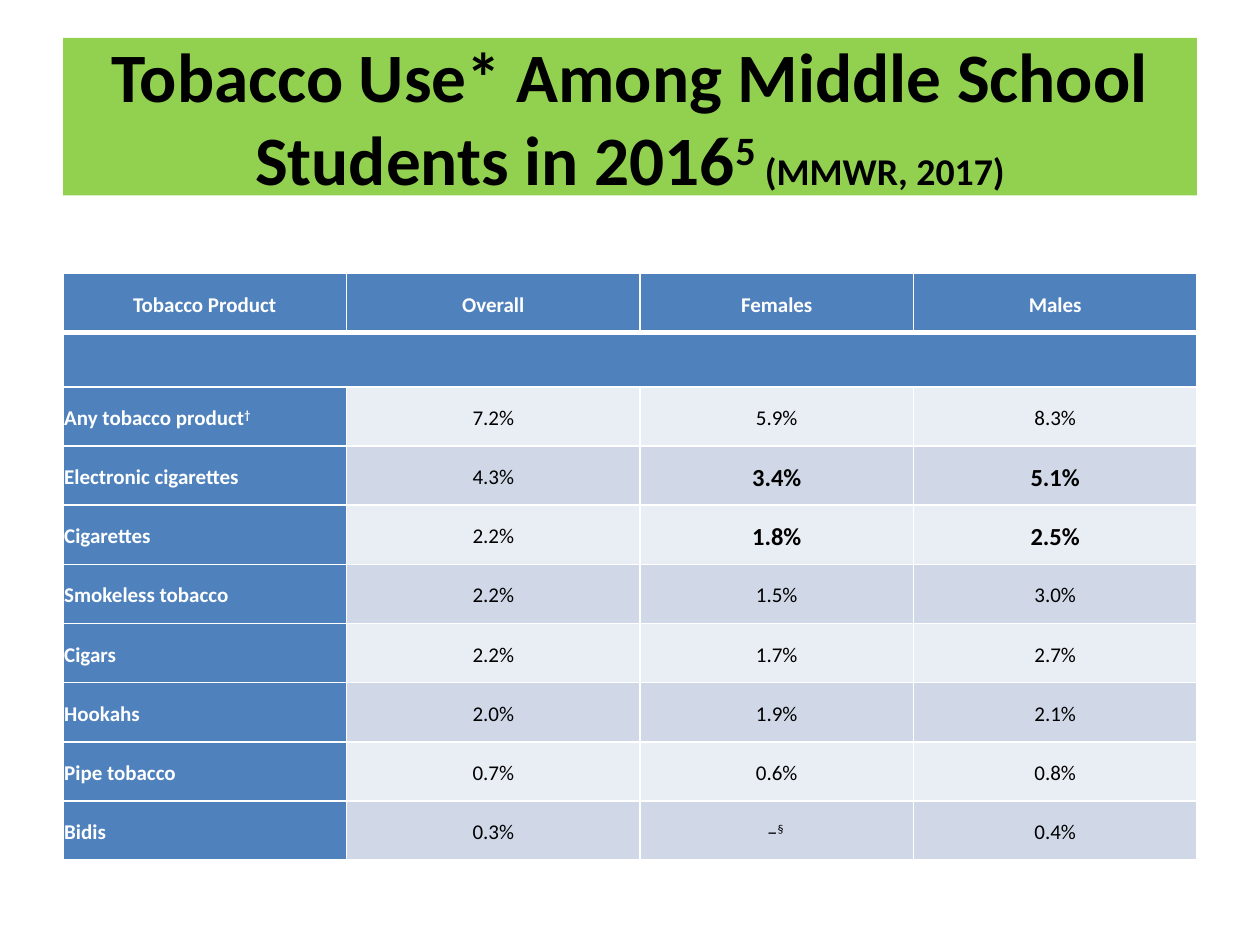
from lxml.etree import SubElement
from pptx import Presentation
from pptx.dml.color import RGBColor
from pptx.enum.text import MSO_ANCHOR as Anchor, MSO_AUTO_SIZE as AutoSize, PP_ALIGN as Align
from pptx.oxml.ns import qn
from pptx.util import Inches, Pt

COLORS = {
    "banner": "92D050",
    "header": "4F81BD",
    "light": "E9EDF4",
    "dark": "D0D8E8",
    "white": "FFFFFF",
    "black": "000000",
}
COLUMN_WIDTHS = [2.25, 2.33, 2.17, 2.25]
ROW_HEIGHTS = [0.47, 0.43] + [0.47] * 8
ROWS = [
    ["Tobacco Product", "Overall", "Females", "Males"],
    ["", "", "", ""],
    ["Any tobacco product^†", "7.2%", "5.9%", "8.3%"],
    ["Electronic cigarettes", "4.3%", "3.4%", "5.1%"],
    ["Cigarettes", "2.2%", "1.8%", "2.5%"],
    ["Smokeless tobacco", "2.2%", "1.5%", "3.0%"],
    ["Cigars", "2.2%", "1.7%", "2.7%"],
    ["Hookahs", "2.0%", "1.9%", "2.1%"],
    ["Pipe tobacco", "0.7%", "0.6%", "0.8%"],
    ["Bidis", "0.3%", "–^§ ", "0.4%"],
]
EMPHASIZED = {"3.4%", "5.1%", "1.8%", "2.5%"}


def write_text(para, text, size, color, bold):
    para.font.name = "Calibri"
    para.font.size = Pt(size)
    para.font.bold = bold
    para.font.color.rgb = RGBColor.from_string(COLORS[color])
    for index, part in enumerate(text.split("^")):
        span = para.add_run()
        span.text = part
        if index == 1:
            span.font._element.set("baseline", "30000")


def add_border(cell, side, width):
    line = SubElement(cell._tc.get_or_add_tcPr(), qn(f"a:ln{side}"), w=str(Pt(width)))
    fill = SubElement(line, qn("a:solidFill"))
    SubElement(fill, qn("a:srgbClr"), val=COLORS["white"])


deck = Presentation()
deck.slide_width = Inches(10)
deck.slide_height = Inches(7.5)
page = deck.slides.add_slide(deck.slide_layouts[5])

title = page.shapes.title
title.left, title.top = Inches(0.5), Inches(0.3)
title.width, title.height = Inches(9), Inches(1.25)
title.fill.solid()
title.fill.fore_color.rgb = RGBColor.from_string(COLORS["banner"])
frame = title.text_frame
frame.auto_size = AutoSize.NONE
frame.word_wrap = True
frame.vertical_anchor = Anchor.MIDDLE
heading = frame.paragraphs[0]
heading.alignment = Align.CENTER
write_text(heading, "Tobacco Use* Among Middle School Students in 2016^5 ^(MMWR, 2017)", 39.6, "black", True)
heading.runs[-1].font.size = Pt(21.6)

table = page.shapes.add_table(
    len(ROWS), len(COLUMN_WIDTHS), Inches(0.5), Inches(2.17), Inches(9), Inches(4.67)
).table
table.first_col = True
for column, width in zip(table.columns, COLUMN_WIDTHS):
    column.width = Inches(width)
for row, height in zip(table.rows, ROW_HEIGHTS):
    row.height = Inches(height)
table.cell(1, 0).merge(table.cell(1, 3))

for r, texts in enumerate(ROWS):
    for c, text in enumerate(texts):
        cell = table.cell(r, c)
        for side in "LRTB":
            thick = (r, side) in [(0, "B"), (1, "T")]
            add_border(cell, side, 3 if thick else 1)
        labeled = r < 2 or c == 0
        band = "light" if r % 2 == 0 else "dark"
        cell.fill.solid()
        cell.fill.fore_color.rgb = RGBColor.from_string(COLORS["header" if labeled else band])
        if not text:
            continue
        cell.vertical_anchor = Anchor.MIDDLE
        cell.margin_left = cell.margin_right = Inches(0.01)
        cell.margin_top = cell.margin_bottom = Inches(0.01)
        para = cell.text_frame.paragraphs[0]
        para.alignment = Align.LEFT if c == 0 and r > 0 else Align.CENTER
        para.line_spacing = 1.15
        strong = text in EMPHASIZED
        write_text(para, text, 14 if strong else 12, "white" if labeled else "black", labeled or strong)

deck.save("out.pptx")
